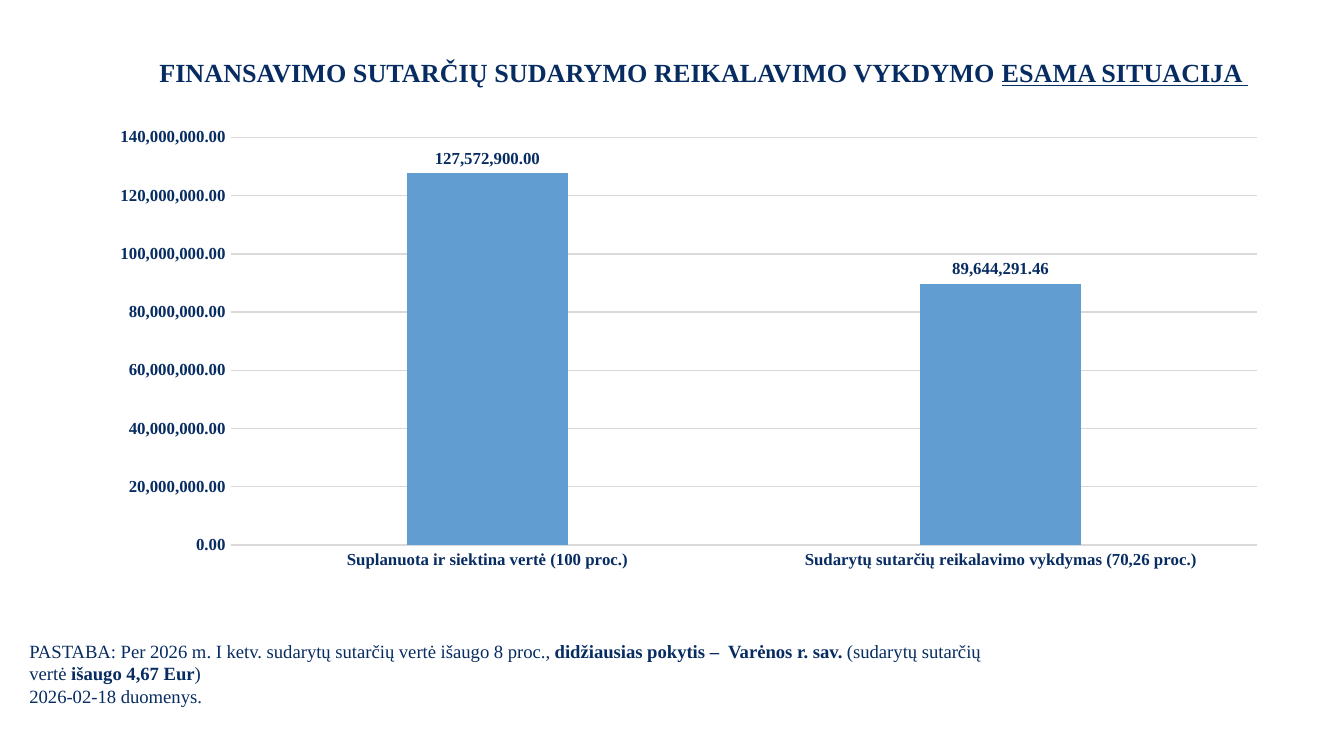
import pptx
import pptx.chart.data
import pptx.dml.color
import pptx.enum.chart
import pptx.enum.text
import pptx.util

WIDTH = 10
HEIGHT = WIDTH * 9 / 16
NAVY, BLUE, GREY = "072C62", "629DD1", "D9D9D9"
SERIF = "Times New Roman"
NUMBER_FORMAT = "#,##0.00"
TITLE_PERCENT = (10.2, 6.58, 84.3, 6.04)
CHART_PERCENT = (7.2, 15.64, 88.1, 60.98)
NOTE_PERCENT = (1.2, 83.73, 72.8, 10.84)

TITLE = [[
    ("FINANSAVIMO SUTARČIŲ SUDARYMO REIKALAVIMO VYKDYMO ", {}),
    ("ESAMA SITUACIJA ", {"underline": True}),
]]
NOTE = [
    [
        ("PASTABA: Per 2026 m. I ketv. sudarytų sutarčių vertė išaugo 8 proc., ", {}),
        ("didžiausias pokytis –  Varėnos r. sav.", {"bold": True}),
        (" (sudarytų sutarčių vertė ", {}),
        ("išaugo 4,67 Eur", {"bold": True}),
        (")", {}),
    ],
    [("2026-02-18 duomenys.", {})],
]
CONTRACT_VALUES = {
    "Suplanuota ir siektina vertė (100 proc.)": 127572900,
    "Sudarytų sutarčių reikalavimo vykdymas (70,26 proc.)": 89644291.46,
}


def color(hex_code):
    return pptx.dml.color.RGBColor.from_string(hex_code)


def apply(target, values):
    for name, value in values.items():
        setattr(target, name, value)


def set_font(font, size, **values):
    apply(font, {"name": SERIF, "size": pptx.util.Pt(size), **values})
    font.color.rgb = color(NAVY)


def place(percents):
    pairs = zip(percents, (WIDTH, HEIGHT, WIDTH, HEIGHT))
    return [pptx.util.Inches(percent * length / 100) for percent, length in pairs]


def write_text(box, paragraphs, size, alignment, **values):
    frame = box.text_frame
    apply(frame, {
        "word_wrap": True,
        "auto_size": pptx.enum.text.MSO_AUTO_SIZE.SHAPE_TO_FIT_TEXT,
        "vertical_anchor": pptx.enum.text.MSO_ANCHOR.TOP,
    })
    for index, spans in enumerate(paragraphs):
        para = frame.add_paragraph() if index else frame.paragraphs[0]
        para.alignment = alignment
        for text, emphasis in spans:
            span = para.add_run()
            span.text = text
            set_font(span.font, size, **{**values, **emphasis})


def add_title(page):
    title = page.shapes.title
    apply(title, dict(zip(("left", "top", "width", "height"), place(TITLE_PERCENT))))
    write_text(title, TITLE, 14, pptx.enum.text.PP_ALIGN.CENTER, bold=True)


def add_note(page):
    box = page.shapes.add_textbox(*place(NOTE_PERCENT))
    write_text(box, NOTE, 10, pptx.enum.text.PP_ALIGN.LEFT)


def format_line(line):
    line.color.rgb = color(GREY)
    line.width = pptx.util.Pt(0.75)


def format_axes(chart):
    for axis in (chart.category_axis, chart.value_axis):
        apply(axis, {
            "major_tick_mark": pptx.enum.chart.XL_TICK_MARK.NONE,
            "minor_tick_mark": pptx.enum.chart.XL_TICK_MARK.NONE,
        })
        set_font(axis.tick_labels.font, 9, bold=True)
    format_line(chart.category_axis.format.line)
    values = chart.value_axis
    apply(values, {
        "minimum_scale": 0,
        "maximum_scale": 140000000,
        "major_unit": 20000000,
        "has_major_gridlines": True,
    })
    format_line(values.major_gridlines.format.line)
    values.format.line.fill.background()
    apply(values.tick_labels, {
        "number_format": NUMBER_FORMAT,
        "number_format_is_linked": False,
    })


def format_columns(plot):
    apply(plot, {"gap_width": 219, "overlap": -27, "vary_by_categories": False})
    series = plot.series[0]
    series.format.fill.solid()
    series.format.fill.fore_color.rgb = color(BLUE)
    labels = series.data_labels
    apply(labels, {
        "show_value": True,
        "number_format": NUMBER_FORMAT,
        "number_format_is_linked": False,
        "position": pptx.enum.chart.XL_LABEL_POSITION.OUTSIDE_END,
    })
    set_font(labels.font, 9, bold=True)


def add_column_chart(page):
    data = pptx.chart.data.CategoryChartData(number_format=NUMBER_FORMAT)
    data.categories = list(CONTRACT_VALUES)
    data.add_series("Series 1", list(CONTRACT_VALUES.values()))
    kind = pptx.enum.chart.XL_CHART_TYPE.COLUMN_CLUSTERED
    chart = page.shapes.add_chart(kind, *place(CHART_PERCENT), data).chart
    apply(chart, {"has_title": False, "has_legend": False})
    apply(chart.font, {"name": "League Spartan", "size": pptx.util.Pt(10)})
    chart.font.color.rgb = color("000000")
    format_axes(chart)
    format_columns(chart.plots[0])


def main():
    deck = pptx.Presentation()
    apply(deck, {
        "slide_width": pptx.util.Inches(WIDTH),
        "slide_height": pptx.util.Inches(HEIGHT),
    })
    page = deck.slides.add_slide(deck.slide_layouts.get_by_name("Title Only"))
    add_title(page)
    add_note(page)
    add_column_chart(page)
    deck.save("out.pptx")


if __name__ == "__main__":
    main()
